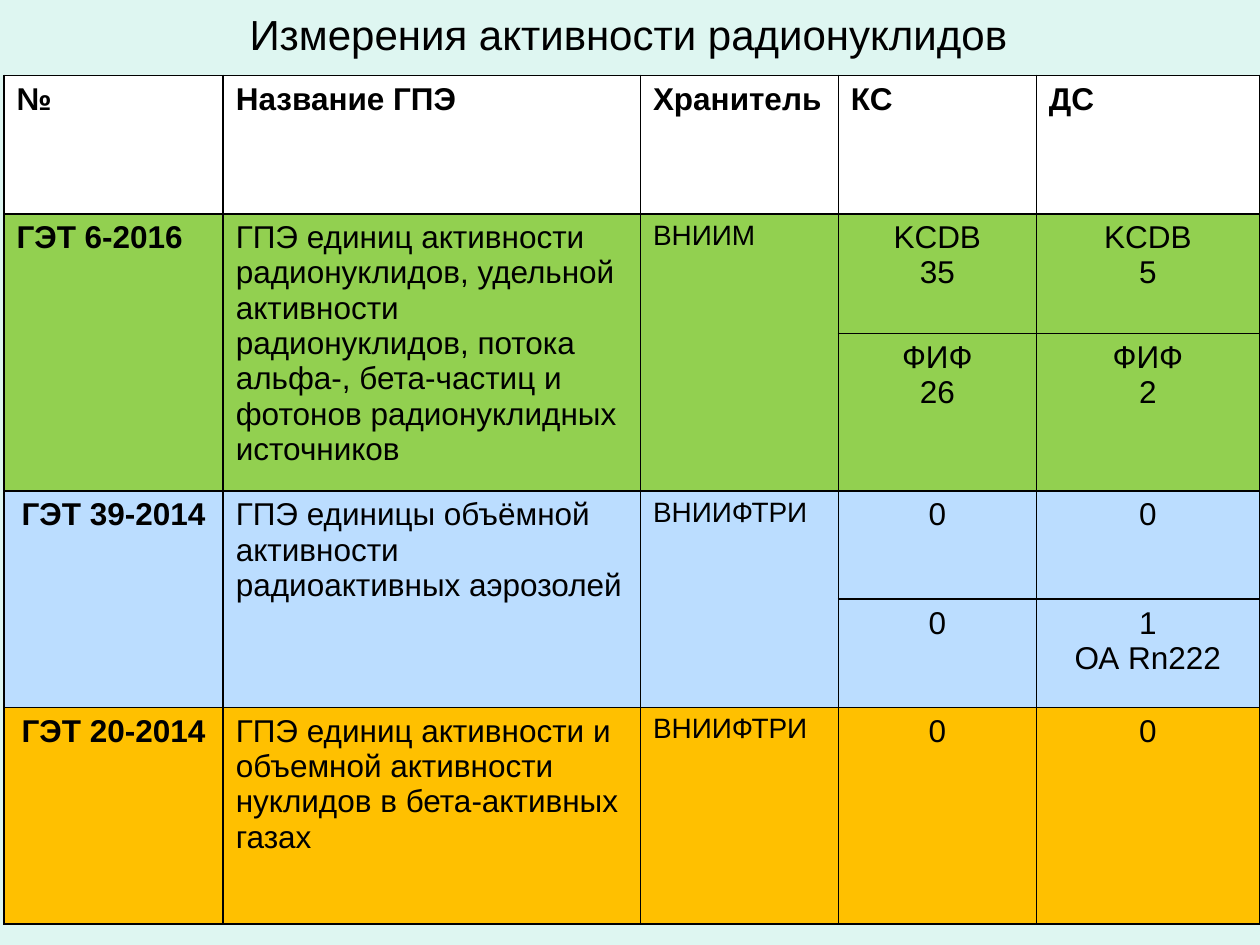
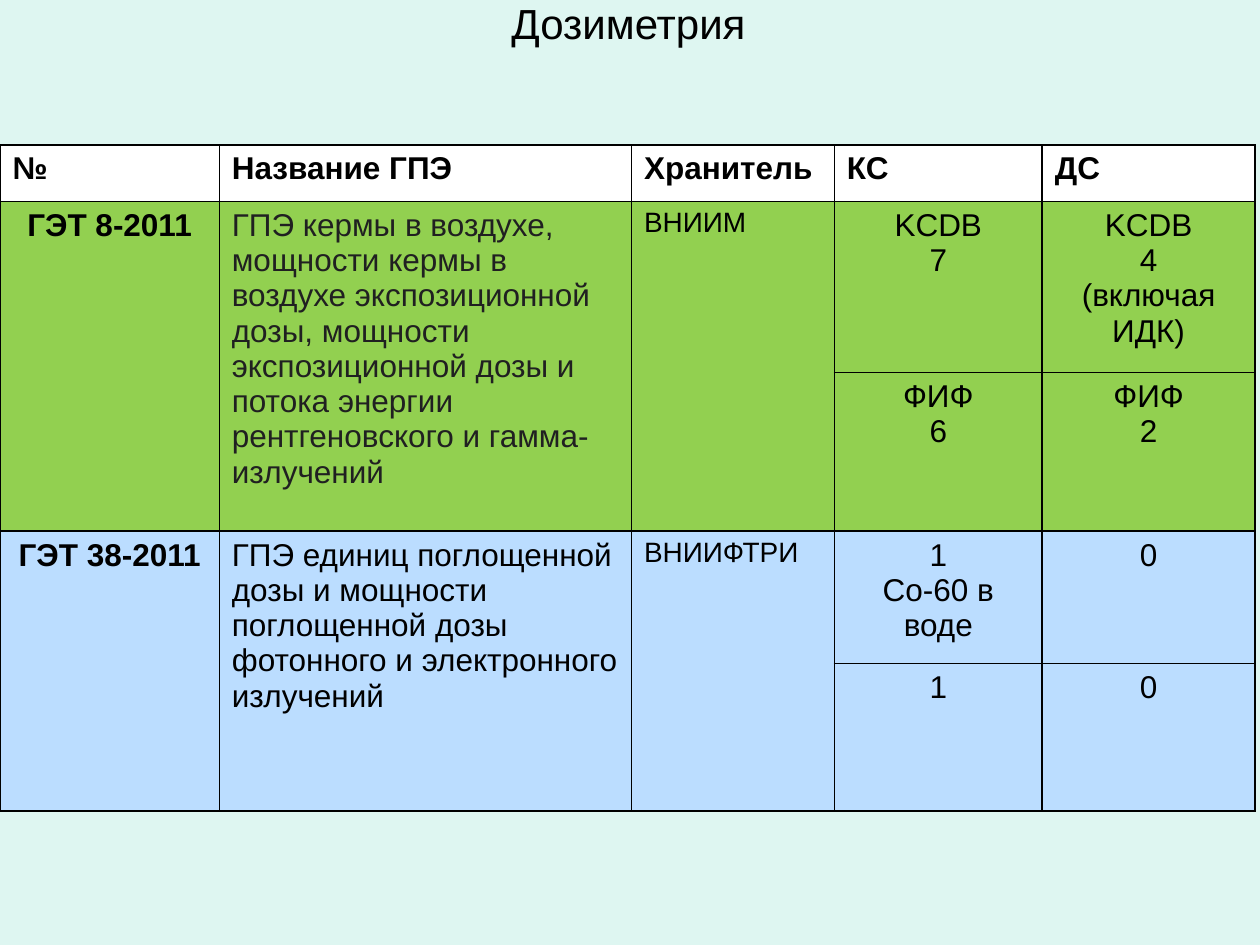
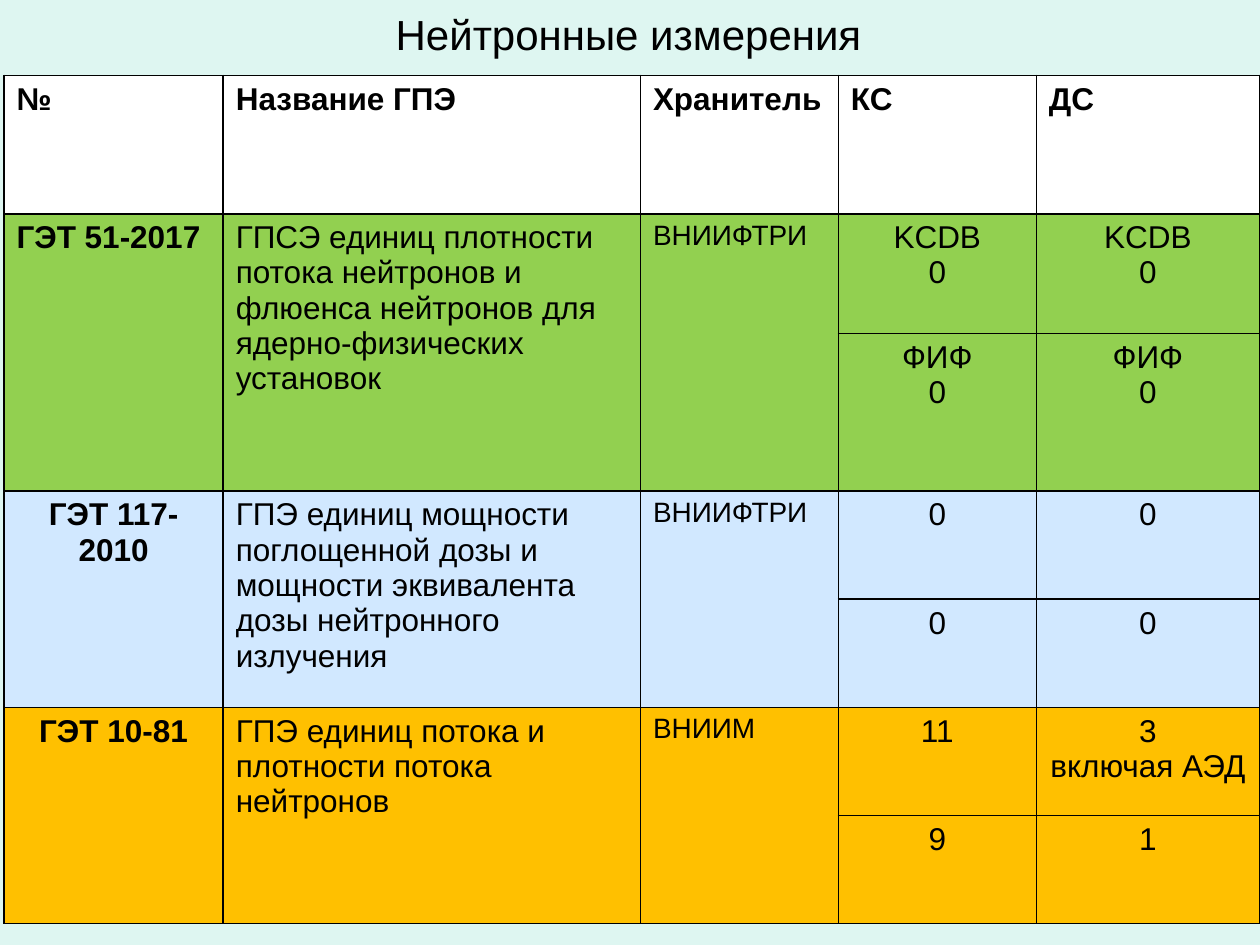
from lxml import etree
from pptx import Presentation
from pptx.dml.color import RGBColor
from pptx.enum.text import MSO_ANCHOR, MSO_AUTO_SIZE, PP_ALIGN
from pptx.oxml.ns import qn
from pptx.util import Cm, Pt

LEFT, MID = PP_ALIGN.LEFT, PP_ALIGN.CENTER
CENTRE = MSO_ANCHOR.MIDDLE
FIXED = MSO_AUTO_SIZE.NONE

FONT = "Arial"
MINT = RGBColor(0xDE, 0xF6, 0xF1)
BLACK = RGBColor(0, 0, 0)
DARK = RGBColor(0x20, 0x20, 0x21)
WHITE = RGBColor(0xFF, 0xFF, 0xFF)
GREEN = RGBColor(0x92, 0xD0, 0x50)
BLUE = RGBColor(0xBB, 0xDD, 0xFF)
PALE = RGBColor(0xD1, 0xE8, 0xFF)
AMBER = RGBColor(0xFF, 0xC0, 0x00)

HEADS = ["№", "Название ГПЭ", "Хранитель", "КС", "ДС"]
WIDE = [4.42, 8.41, 3.99, 3.99, 4.5]
TALL = [2.79, 2.41, 3.18, 2.18, 2.18]
FULL_BOX = (0.08, 1.52)

# Each group: fill, number, its alignment, name, name colour, keeper, (КС, ДС) rows
ACTIVE = [
    (GREEN, "ГЭТ 6-2016", LEFT,
     "ГПЭ единиц активности радионуклидов, удельной активности радионуклидов, "
     "потока альфа-, бета-частиц и фотонов радионуклидных источников",
     BLACK, "ВНИИМ", [("KCDB\n35", "KCDB\n5"), ("ФИФ\n26", "ФИФ\n2")]),
    (BLUE, "ГЭТ 39-2014", MID,
     "ГПЭ единицы объёмной активности радиоактивных аэрозолей",
     BLACK, "ВНИИФТРИ", [("0", "0"), ("0", "1\nОА Rn222")]),
    (AMBER, "ГЭТ 20-2014", MID,
     "ГПЭ единиц активности и объемной активности нуклидов в бета-активных газах",
     BLACK, "ВНИИФТРИ", [("0", "0")]),
]
DOSE = [
    (GREEN, "ГЭТ 8-2011", MID,
     "ГПЭ кермы в воздухе, мощности кермы в воздухе экспозиционной дозы, "
     "мощности экспозиционной дозы и потока энергии рентгеновского и "
     "гамма- излучений",
     DARK, "ВНИИМ",
     [("KCDB\n7", "KCDB\n4\n(включая ИДК)"), ("ФИФ\n6", "ФИФ\n2")]),
    (BLUE, "ГЭТ 38-2011", MID,
     "ГПЭ единиц поглощенной дозы и мощности поглощенной дозы фотонного и "
     "электронного излучений",
     BLACK, "ВНИИФТРИ", [("1\nCо-60 в воде", "0"), ("1", "0")]),
]
NEUTRON = [
    (GREEN, "ГЭТ 51-2017", LEFT,
     "ГПСЭ единиц плотности потока нейтронов и флюенса нейтронов для "
     "ядерно-физических установок",
     BLACK, "ВНИИФТРИ", [("KCDB\n0", "KCDB\n0"), ("ФИФ\n0", "ФИФ\n0")]),
    (PALE, "ГЭТ 117-2010", MID,
     "ГПЭ единиц мощности поглощенной дозы и мощности эквивалента дозы "
     "нейтронного излучения",
     BLACK, "ВНИИФТРИ", [("0", "0"), ("0", "0")]),
    (AMBER, "ГЭТ 10-81", MID,
     "ГПЭ единиц потока и плотности потока нейтронов",
     BLACK, "ВНИИМ", [("11", "3\nвключая АЭД"), ("9", "1")]),
]


def write(frame, text, size=18, bold=False, color=BLACK, align=LEFT):
    frame.text = text
    for para in frame.paragraphs:
        para.alignment = align
        for run in para.runs:
            font = run.font
            font.name, font.size, font.bold = FONT, Pt(size), bold
            font.color.rgb = color


def style(cell, fill):
    """Give a cell a thin black border on every side and a plain fill."""
    props = cell._tc.get_or_add_tcPr()
    for side in ("lnL", "lnR", "lnT", "lnB"):
        line = etree.SubElement(props, qn(f"a:{side}"), w=str(Pt(1)))
        solid = etree.SubElement(line, qn("a:solidFill"))
        etree.SubElement(solid, qn("a:srgbClr"), val=str(BLACK))
    cell.fill.solid()
    cell.fill.fore_color.rgb = fill


def add_title(slide, text, high):
    title = slide.shapes.title
    title.left, title.top = Cm(1.24), Cm(0)
    title.width, title.height = Cm(22.86), Cm(high)
    frame = title.text_frame
    frame.word_wrap = True
    frame.auto_size = FIXED
    frame.vertical_anchor = CENTRE
    write(frame, text, size=24, align=MID)


def fill_group(table, top, group):
    """Fill the rows of one standard from row top; return the next free row."""
    fill, code, align, name, color, keeper, pairs = group
    end = top + len(pairs)
    for row, pair in enumerate(pairs, top):
        for col in range(len(HEADS)):
            style(table.cell(row, col), fill)
        for col, text in enumerate(pair, 3):
            write(table.cell(row, col).text_frame, text, align=MID)
    if len(pairs) > 1:
        for col in range(3):
            table.cell(top, col).merge(table.cell(end - 1, col))
    write(table.cell(top, 0).text_frame, code, bold=True, align=align)
    write(table.cell(top, 1).text_frame, name, color=color)
    write(table.cell(top, 2).text_frame, keeper, size=16)
    return end


def add_grid(slide, box, wide, tall, groups):
    left, top = box
    table = slide.shapes.add_table(
        len(tall), len(wide), Cm(left), Cm(top),
        Cm(sum(wide)), Cm(sum(tall))).table
    table.first_row = table.horz_banding = False
    for col, width in zip(table.columns, wide):
        col.width = Cm(width)
    for row, height in zip(table.rows, tall):
        row.height = Cm(height)
    for col, head in enumerate(HEADS):
        cell = table.cell(0, col)
        style(cell, WHITE)
        write(cell.text_frame, head, bold=True)
    row = 1
    for group in groups:
        row = fill_group(table, row, group)


def add_page(deck, title, high, box, wide, tall, groups):
    slide = deck.slides.add_slide(deck.slide_layouts[5])
    add_title(slide, title, high)
    add_grid(slide, box, wide, tall, groups)


def main():
    deck = Presentation()
    deck.slide_width, deck.slide_height = Cm(25.4), Cm(19.05)
    back = deck.slide_master.background.fill
    back.solid()
    back.fore_color.rgb = MINT

    add_page(deck, "Измерения активности радионуклидов", 1.37,
             FULL_BOX, WIDE, TALL + [4.37], ACTIVE)
    add_page(deck, "Дозиметрия", 0.91, (0, 2.92),
             [4.42, 8.31, 4.09, 4.19, 4.29],
             [1.14, 3.45, 3.2, 2.67, 2.97], DOSE)
    add_page(deck, "Нейтронные измерения", 1.37,
             FULL_BOX, WIDE, TALL + [2.18, 2.18], NEUTRON)
    deck.save("out.pptx")


if __name__ == "__main__":
    main()
